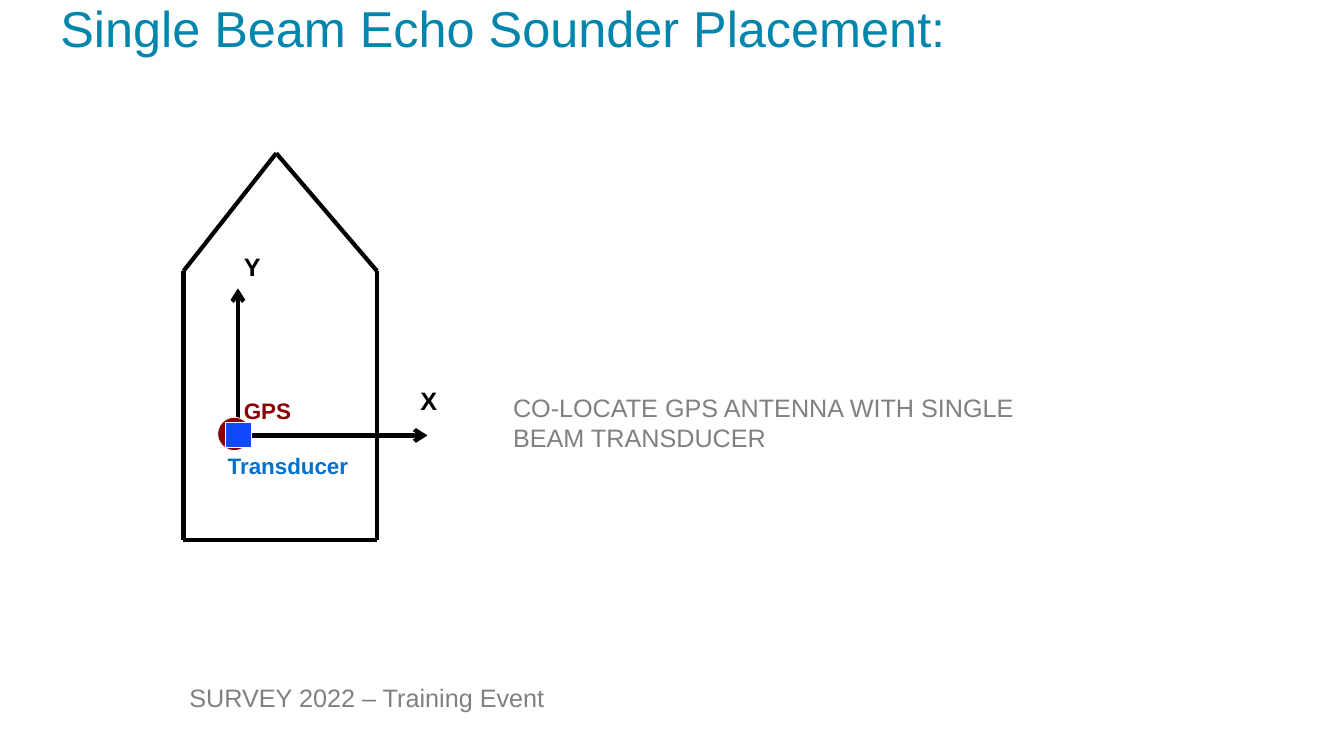
from pptx import Presentation
from pptx.dml.color import RGBColor
from pptx.enum import shapes, text
from pptx.oxml.ns import qn
from pptx.util import Inches, Pt
from lxml import etree

COLORS = {
    "title": "0085AD", "grey": "808080", "black": "000000", "white": "FFFFFF",
    "antenna": "8B0000", "transducer": "1048FF", "transducer_label": "0072CE",
}
TITLE = ("Single Beam Echo Sounder Placement:", (0.5, 0.12, 12.33, 1.08), 36, "title", False)
FOOTER = ("SURVEY 2022 – Training Event", (1.78, 6.72, 3.75, 0.4), 18, "grey", False)
ADVICE = ("CO-LOCATE GPS ANTENNA WITH SINGLE BEAM TRANSDUCER",
          (4.99, 3.84, 5.73, 0.71), 18, "grey", False)
AXIS_LABELS = [
    ("X", (4.07, 3.77, 0.33, 0.4), 18, "black", True),
    ("Y", (2.32, 2.44, 0.33, 0.4), 18, "black", True),
]
ANTENNA_LABEL = ("GPS", (2.32, 3.89, 0.75, 0.37), 16, "antenna", True)
TRANSDUCER_LABEL = ("Transducer", (2.16, 4.44, 1.75, 0.37), 16, "transducer_label", True)
HULL = [(2.74, 1.52), (1.82, 2.69), (1.82, 5.36), (3.74, 5.36), (3.74, 2.69)]
AXES = [((2.32, 4.32), (4.24, 4.32)), ((2.36, 4.33), (2.36, 2.86))]
ANTENNA = (shapes.MSO_SHAPE.OVAL, (2.16, 4.14, 0.33, 0.33), "antenna", 0.5)
TRANSDUCER = (shapes.MSO_SHAPE.RECTANGLE, (2.24, 4.19, 0.25, 0.25), "transducer", 0.75)


def color(name):
    return RGBColor.from_string(COLORS[name])


def add_text(page, words, place, size, tint, bold):
    box = page.shapes.add_textbox(*map(Inches, place))
    box.text_frame.word_wrap = True
    box.text_frame.vertical_anchor = text.MSO_ANCHOR.TOP
    para = box.text_frame.paragraphs[0]
    span = para.add_run()
    span.text = words
    span.font.name = "Arial"
    span.font.size = Pt(size)
    span.font.bold = bold
    span.font.color.rgb = color(tint)
    return box


def add_line(page, start, end, arrow=False):
    line = page.shapes.add_connector(
        shapes.MSO_CONNECTOR.STRAIGHT, *map(Inches, start + end))
    line.line.color.rgb = color("black")
    line.line.width = Pt(3)
    if arrow:
        etree.SubElement(line.line._get_or_add_ln(), qn("a:tailEnd"), type="arrow")
    etree.SubElement(line._element.spPr, qn("a:effectLst"))


def add_marker(page, kind, place, tint, outline):
    marker = page.shapes.add_shape(kind, *map(Inches, place))
    marker.shadow.inherit = False
    marker.fill.solid()
    marker.fill.fore_color.rgb = color(tint)
    marker.line.color.rgb = color("white")
    marker.line.width = Pt(outline)


def main():
    deck = Presentation()
    deck.slide_width, deck.slide_height = Inches(13.33), Inches(7.5)
    page = deck.slides.add_slide(deck.slide_layouts[6])

    footer = add_text(page, *FOOTER)
    footer.text_frame.word_wrap = False
    title = add_text(page, *TITLE)
    title.text_frame.paragraphs[0].line_spacing = Pt(29)

    for start, end in zip(HULL, HULL[1:] + HULL[:1]):
        add_line(page, start, end)
    for start, end in AXES:
        add_line(page, start, end, arrow=True)
    for label in AXIS_LABELS:
        add_text(page, *label)

    add_marker(page, *ANTENNA)
    add_text(page, *ANTENNA_LABEL)
    add_marker(page, *TRANSDUCER)
    add_text(page, *TRANSDUCER_LABEL)
    add_text(page, *ADVICE)
    deck.save("out.pptx")


if __name__ == "__main__":
    main()
